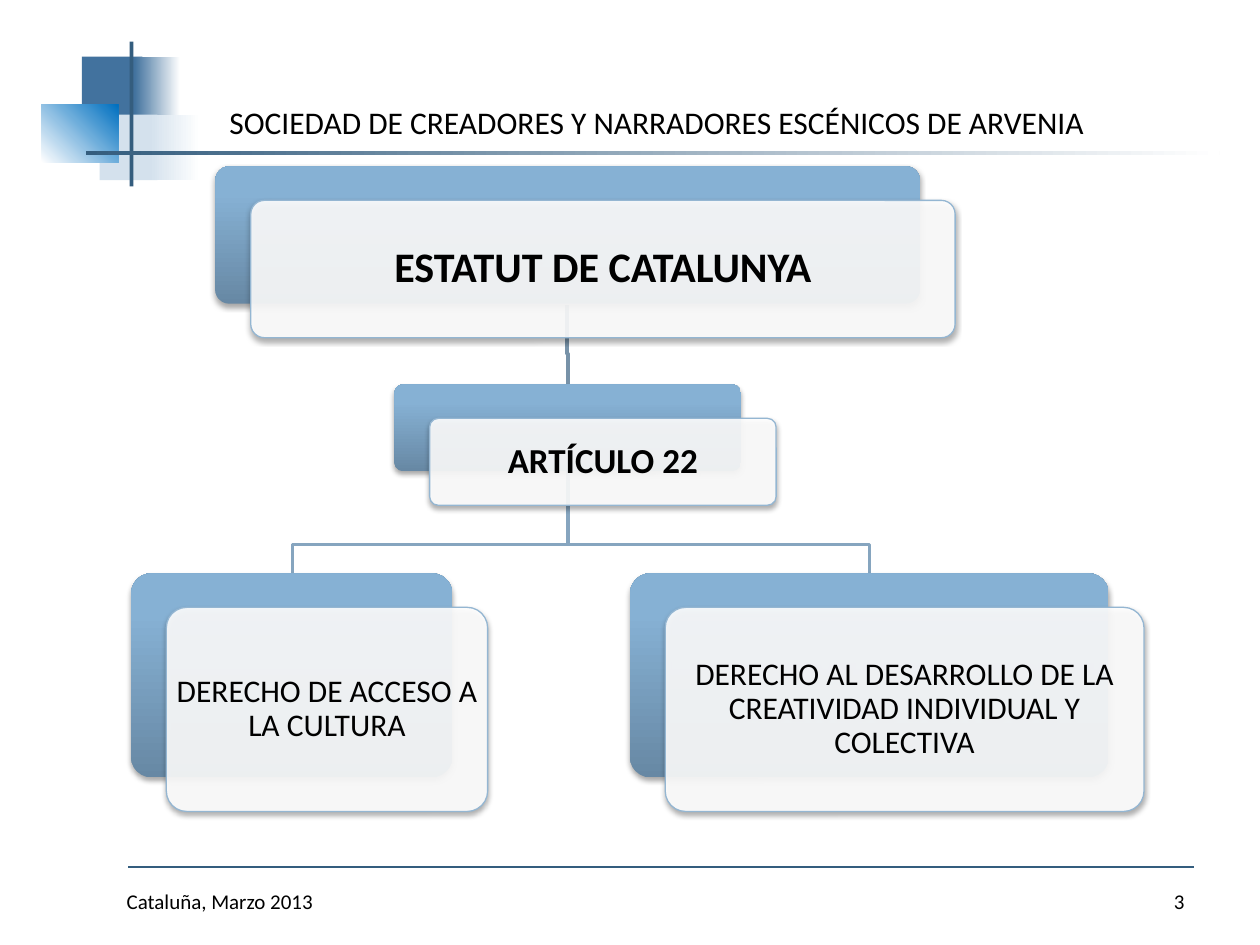
"""Builds the slide on the Estatut de Catalunya and its article 22."""
from lxml.etree import SubElement
from pptx import Presentation
from pptx.dml.color import RGBColor
from pptx.enum.shapes import MSO_CONNECTOR, MSO_SHAPE
from pptx.enum.text import MSO_ANCHOR, MSO_AUTO_SIZE, PP_ALIGN
from pptx.oxml.ns import qn
from pptx.util import Inches, Pt

BLACK = RGBColor(0x00, 0x00, 0x00)
WHITE = RGBColor(0xFF, 0xFF, 0xFF)
NAVY = RGBColor(0x34, 0x5D, 0x7E)
STEEL = RGBColor(0x42, 0x72, 0x9E)
PALE = RGBColor(0xD4, 0xE1, 0xED)
BRIGHT = RGBColor(0x00, 0x70, 0xC0)
CARD_DARK = RGBColor(0x67, 0x88, 0xA4)
CARD_LIGHT = RGBColor(0x86, 0xB1, 0xD4)
CARD_EDGE = RGBColor(0x94, 0xB6, 0xD2)
BRANCH = RGBColor(0x86, 0xA5, 0xBF)
TRUNK = RGBColor(0x77, 0x92, 0xA8)


def add_block(kind, box, start, end=None, angle=0):
    block = slide.shapes.add_shape(kind, *map(Inches, box))
    block.shadow.inherit = False
    block.line.fill.background()
    if end is None:
        block.fill.solid()
        block.fill.fore_color.rgb = start
    else:
        block.fill.gradient()
        block.fill.gradient_angle = angle
        for stop, color in zip(block.fill.gradient_stops, (start, end)):
            stop.color.rgb = color
    return block


def write(shape, text, size, align, anchor, bold=False):
    frame = shape.text_frame
    frame.text = text
    frame.word_wrap = True
    frame.auto_size = MSO_AUTO_SIZE.NONE
    frame.vertical_anchor = anchor
    paragraph = frame.paragraphs[0]
    paragraph.alignment = align
    font = paragraph.runs[0].font
    font.name, font.size, font.bold = "Calibri", Pt(size), bold
    font.color.rgb = BLACK


presentation = Presentation()
presentation.slide_width, presentation.slide_height = Inches(10), Inches(7.5)
slide = presentation.slides.add_slide(presentation.slide_layouts[5])

heading = slide.shapes.title
heading.left, heading.top = Inches(1.72), Inches(0.77)
heading.width, heading.height = Inches(7.73), Inches(0.4)
write(heading, "SOCIEDAD DE CREADORES Y NARRADORES ESCÉNICOS DE ARVENIA",
      18, PP_ALIGN.LEFT, MSO_ANCHOR.TOP)

footer_rule = slide.shapes.add_connector(
    MSO_CONNECTOR.STRAIGHT, Inches(1.02), Inches(6.88), Inches(9.48), Inches(6.88))
footer_rule.line.color.rgb = NAVY
footer_rule.line.width = Pt(1.5)
SubElement(footer_rule._element.spPr, qn("a:effectLst"))

emblem = [
    ((0.65, 0.45, 0.48, 0.52), STEEL, None, 0),
    ((1.07, 0.45, 0.36, 0.52), STEEL, WHITE, 0),
    ((0.79, 0.91, 0.46, 0.52), PALE, None, 0),
    ((1.19, 0.91, 0.4, 0.52), PALE, WHITE, 0),
    ((0.33, 0.83, 0.61, 0.46), WHITE, BRIGHT, 45),
    ((1.03, 0.33, 0.03, 1.15), NAVY, None, 0),
    ((0.68, 1.2, 9, 0.03), NAVY, WHITE, 0),
]
for box, start, end, angle in emblem:
    add_block(MSO_SHAPE.RECTANGLE, box, start, end, angle)

footers = [
    ("Cataluña, Marzo 2013", 0.16, 3.17, PP_ALIGN.CENTER),
    ("3", 7.17, 2.33, PP_ALIGN.RIGHT),
]
for text, left, width, align in footers:
    footer = slide.shapes.add_textbox(Inches(left), Inches(6.95), Inches(width), Inches(0.4))
    write(footer, text, 12, align, MSO_ANCHOR.MIDDLE)

links = [
    (4.51, 3.73, 4.32, 2.32, 4.55, BRANCH),
    (4.51, 3.73, 4.32, 6.9, 4.55, BRANCH),
    (4.5, 2.42, 2.81, 4.51, 3.05, TRUNK),
]
for from_x, from_y, bend_y, to_x, to_y, color in links:
    builder = slide.shapes.build_freeform(Inches(from_x), Inches(from_y))
    corners = [(from_x, bend_y), (to_x, bend_y), (to_x, to_y)]
    builder.add_line_segments([(Inches(x), Inches(y)) for x, y in corners], close=False)
    link = builder.convert_to_shape()
    link.shadow.inherit = False
    link.fill.background()
    link.line.color.rgb = color
    link.line.width = Pt(2)

cards = [
    ("ESTATUT DE CATALUNYA", (1.71, 1.32, 5.59, 1.09), 24, True, 0.07),
    ("ARTÍCULO 22", (3.13, 3.05, 2.75, 0.69), 20, True, 0.06),
    ("DERECHO AL DESARROLLO DE LA CREATIVIDAD INDIVIDUAL Y COLECTIVA",
     (5, 4.55, 3.8, 1.62), 18, False, 0.02),
    ("DERECHO DE ACCESO A LA CULTURA", (1.04, 4.55, 2.55, 1.62), 18, False, 0.02),
]
for text, (left, top, width, height), size, bold, inset in cards:
    back = add_block(MSO_SHAPE.ROUNDED_RECTANGLE, (left, top, width, height),
                     CARD_DARK, CARD_LIGHT, 90)
    back.fill.gradient_stops[1].position = 0.8
    front = add_block(MSO_SHAPE.ROUNDED_RECTANGLE,
                      (left + 0.28, top + 0.27, width, height), WHITE)
    front_color = front._element.spPr.find(qn("a:solidFill")).find(qn("a:srgbClr"))
    SubElement(front_color, qn("a:alpha"), val="90000")
    front.line.color.rgb = CARD_EDGE
    front.line.width = Pt(0.75)
    for card in (back, front):
        card.adjustments[0] = 0.1
        effects = card._element.spPr.find(qn("a:effectLst"))
        shadow = SubElement(effects, qn("a:outerShdw"), blurRad=str(Pt(3.1)),
                            dist=str(Pt(1.8)), dir="5400000", rotWithShape="0")
        shadow_color = SubElement(shadow, qn("a:srgbClr"), val=str(BLACK))
        SubElement(shadow_color, qn("a:alpha"), val="35000")
    write(front, text, size, PP_ALIGN.CENTER, MSO_ANCHOR.MIDDLE, bold)
    frame = front.text_frame
    frame.margin_left = frame.margin_right = Inches(inset)
    frame.margin_top = frame.margin_bottom = Inches(inset)
    frame.paragraphs[0].line_spacing = 0.9

presentation.save("out.pptx")
